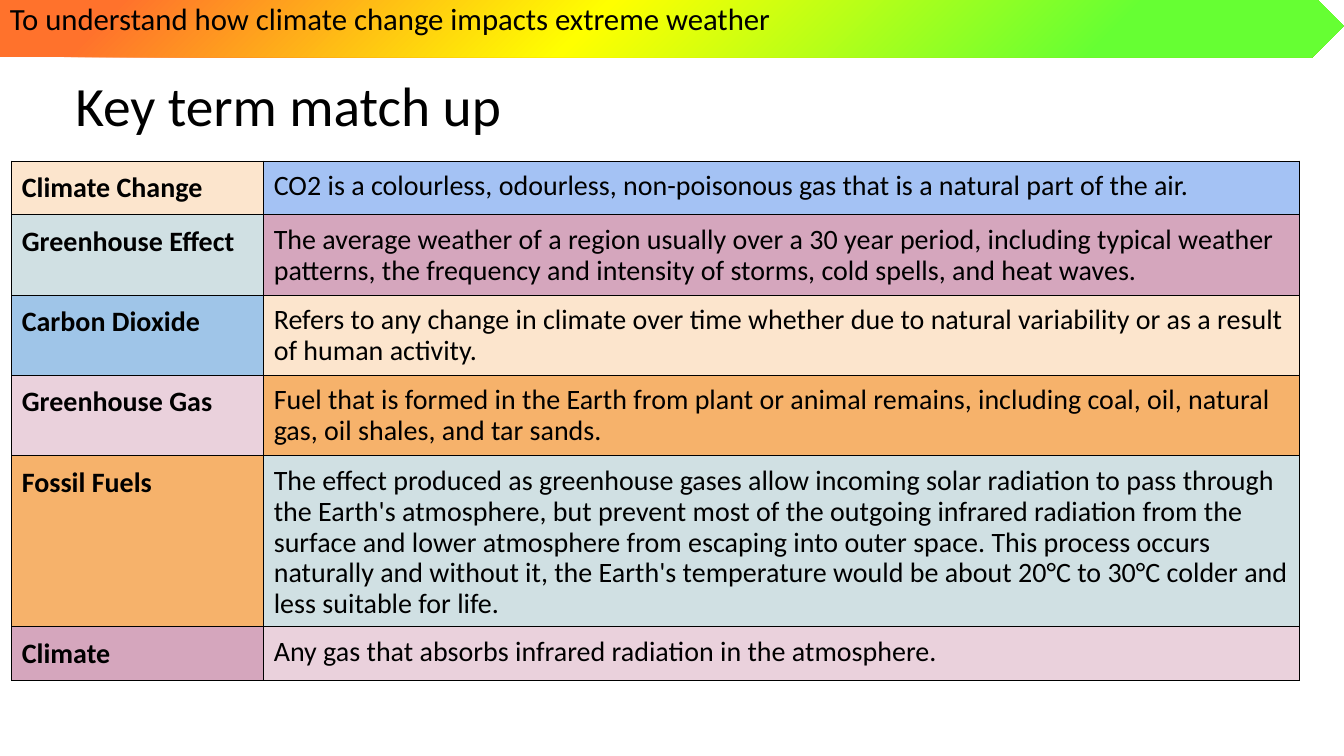
from lxml.etree import SubElement
from pptx import Presentation
from pptx.dml.color import RGBColor
from pptx.enum.shapes import MSO_SHAPE
from pptx.enum.text import MSO_ANCHOR, PP_ALIGN
from pptx.oxml import parse_xml
from pptx.oxml.ns import qn
from pptx.util import Cm, Pt

# Content
OBJECTIVE = "To understand how climate change impacts extreme weather"
TITLE = "Key term match up"
# term, term fill, definition, definition fill
MATCHES = [
    ("Climate Change", "FCE5CD",
     "CO2 is a colourless, odourless, non-poisonous gas that is a natural part of the air.",
     "A4C2F4"),
    ("Greenhouse Effect", "D0E0E3",
     "The average weather of a region usually over a 30 year period, including typical weather "
     "patterns, the frequency and intensity of storms, cold spells, and heat waves.",
     "D5A6BD"),
    ("Carbon Dioxide", "9FC5E8",
     "Refers to any change in climate over time whether due to natural variability or as a "
     "result of human activity.",
     "FCE5CD"),
    ("Greenhouse Gas", "EAD1DC",
     "Fuel that is formed in the Earth from plant or animal remains, including coal, oil, "
     "natural gas, oil shales, and tar sands.",
     "F6B26B"),
    ("Fossil Fuels", "F6B26B",
     "The effect produced as greenhouse gases allow incoming solar radiation to pass through "
     "the Earth's atmosphere, but prevent most of the outgoing infrared radiation from the "
     "surface and lower atmosphere from escaping into outer space. This process occurs "
     "naturally and without it, the Earth's temperature would be about 20°C to 30°C colder "
     "and less suitable for life.",
     "D0E0E3"),
    ("Climate", "D5A6BD",
     "Any gas that absorbs infrared radiation in the atmosphere.",
     "EAD1DC"),
]
BANNER_STOPS = [(0, "66FF33"), (18, "66FF33"), (56, "FFFF00"), (91, "FF722C"), (100, "FF722C")]
COLUMN_WIDTHS = [Cm(6.35), Cm(26.11)]
ROW_HEIGHT = Cm(1.07)
BLACK = "000000"
DRAWING_NS = "http://schemas.openxmlformats.org/drawingml/2006/main"


def colour(hex_value):
    return RGBColor.from_string(hex_value)


def write(frame, text, size, bold=False, spacing=1.0):
    frame.text = text
    frame.word_wrap = True
    paragraph = frame.paragraphs[0]
    paragraph.alignment = PP_ALIGN.LEFT
    paragraph.line_spacing = spacing
    font = paragraph.runs[0].font
    font.name, font.size, font.bold = "Calibri", Pt(size), bold
    font.color.rgb = colour(BLACK)


def radial_fill(shape, stops):
    """Circular gradient centred on the bottom right corner."""
    stop_xml = "".join(
        f'<a:gs pos="{position * 1000}"><a:srgbClr val="{value}"/></a:gs>'
        for position, value in stops)
    gradient = parse_xml(
        f'<a:gradFill xmlns:a="{DRAWING_NS}" rotWithShape="1"><a:gsLst>{stop_xml}</a:gsLst>'
        '<a:path path="circle"><a:fillToRect l="100000" t="100000"/></a:path></a:gradFill>')
    shape.element.spPr.find(qn("a:prstGeom")).addnext(gradient)


def add_borders(cell):
    properties = cell._tc.get_or_add_tcPr()
    for index, side in enumerate(("lnL", "lnR", "lnT", "lnB")):
        line = SubElement(properties, qn(f"a:{side}"), w=str(Pt(0.75)))
        SubElement(SubElement(line, qn("a:solidFill")), qn("a:srgbClr"), val=BLACK)
        properties.insert(index, line)


deck = Presentation()
deck.slide_width, deck.slide_height = Cm(33.87), Cm(19.05)
slide = deck.slides.add_slide(deck.slide_layouts[6])

# Title
title = slide.shapes.add_textbox(Cm(1.65), Cm(1.96), Cm(29.21), Cm(1.57))
title.text_frame.vertical_anchor = MSO_ANCHOR.MIDDLE
write(title.text_frame, TITLE, 39.6, spacing=0.9)

# Terms and definitions
match_table = slide.shapes.add_table(
    len(MATCHES), 2, Cm(0.3), Cm(4.06), sum(COLUMN_WIDTHS), ROW_HEIGHT * len(MATCHES)).table
match_table.first_row = match_table.horz_banding = False
for column, width in zip(match_table.columns, COLUMN_WIDTHS):
    column.width = width
for row, (term, term_fill, definition, definition_fill) in enumerate(MATCHES):
    entries = [(term, term_fill, True, 1.0), (definition, definition_fill, False, 0.9)]
    for column, (text, fill, bold, spacing) in enumerate(entries):
        cell = match_table.cell(row, column)
        cell.margin_left = cell.margin_right = Cm(0.25)
        cell.margin_top = cell.margin_bottom = Cm(0.25)
        write(cell.text_frame, text, 20, bold, spacing)
        cell.fill.solid()
        cell.fill.fore_color.rgb = colour(fill)
        add_borders(cell)

# Objective banner
banner = slide.shapes.add_shape(
    MSO_SHAPE.RIGHT_ARROW, Cm(0), Cm(-0.13), deck.slide_width, Cm(1.57))
banner.adjustments[0], banner.adjustments[1] = 1, 0.51
banner.shadow.inherit = False
banner.line.fill.background()
radial_fill(banner, BANNER_STOPS)
banner.text_frame.vertical_anchor = MSO_ANCHOR.TOP
write(banner.text_frame, OBJECTIVE, 22)

deck.save("out.pptx")
